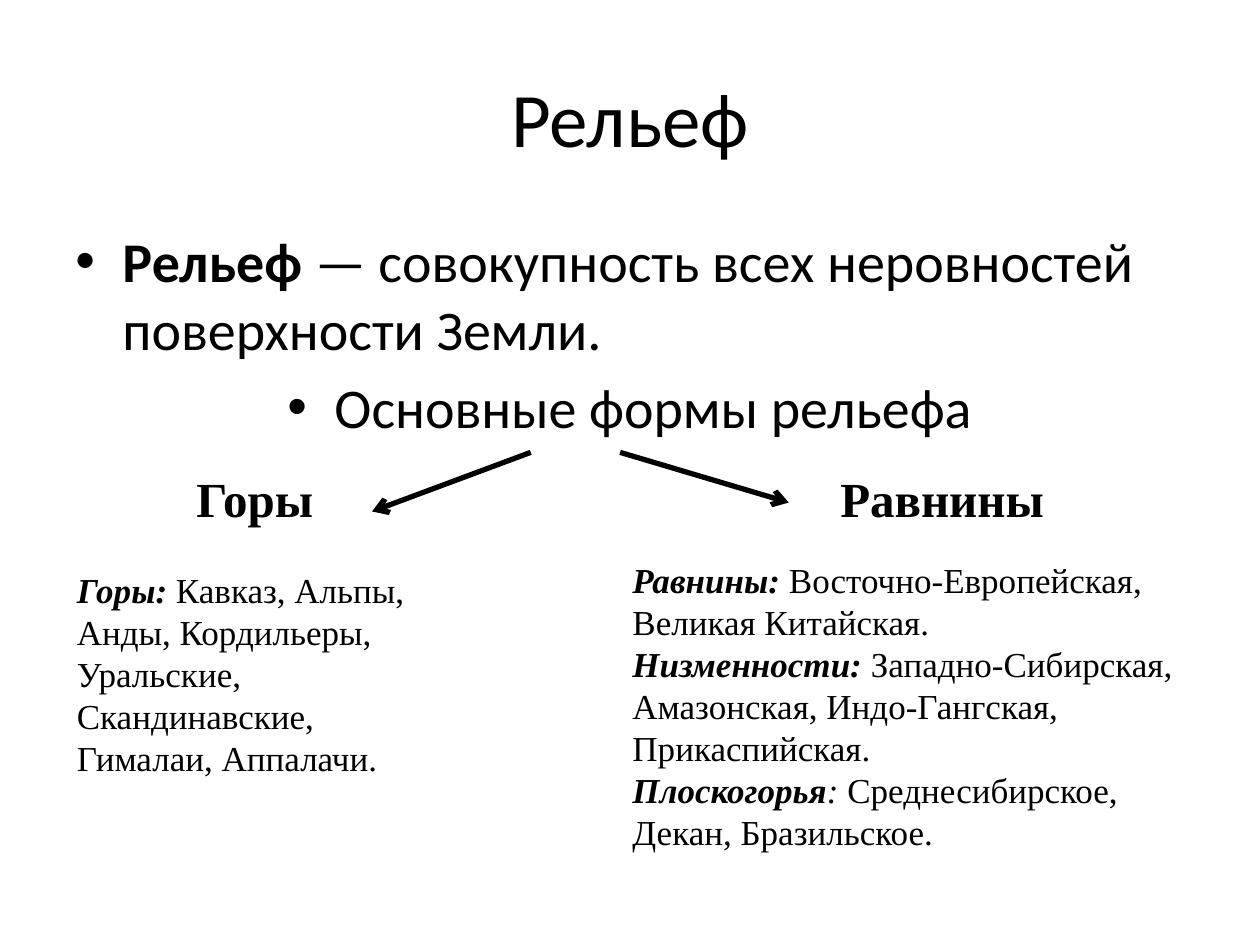
from pptx import Presentation
from pptx.dml.color import RGBColor
from pptx.enum.shapes import MSO_CONNECTOR
from pptx.enum.text import MSO_ANCHOR, PP_ALIGN
from pptx.oxml.ns import qn
from pptx.util import Cm, Pt
from lxml import etree

LINE = MSO_CONNECTOR.STRAIGHT
MIDDLE = MSO_ANCHOR.MIDDLE
LEFT, CENTER = PP_ALIGN.LEFT, PP_ALIGN.CENTER
COLORS = {"ink": "000000", "page": "FFFFFF"}
SANS, SERIF = "Calibri", "Times New Roman"
TITLE_ONLY = 5


def color(name):
    return RGBColor.from_string(COLORS[name])


def style(para, face, size, align=LEFT):
    para.alignment = align
    para.font.name = face
    para.font.size = Pt(size)
    para.font.color.rgb = color("ink")


def add_bullet(para):
    props = para._p.get_or_add_pPr()
    props.set("marL", str(Cm(0.95)))
    props.set("indent", str(-Cm(0.95)))
    font = etree.SubElement(props, qn("a:buFont"))
    font.set("typeface", "Arial")
    mark = etree.SubElement(props, qn("a:buChar"))
    mark.set("char", "•")


def add_runs(para, runs):
    """Add (text, bold, italic) runs."""
    for text, bold, italic in runs:
        run = para.add_run()
        run.text = text
        run.font.bold = bold
        run.font.italic = italic


def add_title(slide, text):
    title = slide.shapes.title
    title.left, title.top = Cm(1.27), Cm(0.76)
    title.width, title.height = Cm(22.86), Cm(3.18)
    frame = title.text_frame
    frame.text = text
    frame.vertical_anchor = MIDDLE
    style(frame.paragraphs[0], SANS, 44, CENTER)


def add_text(slide, box, paras, face, size, aligns=None, bullets=False):
    shape = slide.shapes.add_textbox(*map(Cm, box))
    frame = shape.text_frame
    frame.word_wrap = True
    for i, runs in enumerate(paras):
        para = frame.add_paragraph() if i else frame.paragraphs[0]
        if bullets:
            if i:
                para.space_before = Pt(6.4)
            add_bullet(para)
        style(para, face, size, aligns[i] if aligns else LEFT)
        add_runs(para, runs)


def add_arrow(slide, start, end):
    arrow = slide.shapes.add_connector(LINE, *map(Cm, start + end))
    arrow.line.color.rgb = color("ink")
    arrow.line.width = Pt(3)
    tail = etree.SubElement(arrow.line._get_or_add_ln(), qn("a:tailEnd"))
    tail.set("type", "arrow")
    etree.SubElement(arrow._element.spPr, qn("a:effectLst"))


def main():
    deck = Presentation()
    deck.slide_width, deck.slide_height = Cm(25.4), Cm(19.05)
    slide = deck.slides.add_slide(deck.slide_layouts[TITLE_ONLY])
    slide.background.fill.solid()
    slide.background.fill.fore_color.rgb = color("page")

    add_title(slide, "Рельеф")
    intro = [
        [("Рельеф", True, False),
         (" — совокупность всех неровностей поверхности Земли.", False, False)],
        [("Основные формы рельефа", False, False)],
    ]
    add_text(slide, (1.27, 4.45, 22.86, 12.57), intro, SANS, 32,
             (LEFT, CENTER), bullets=True)

    add_arrow(slide, (12.5, 9.12), (15.9, 10.13))
    add_arrow(slide, (10.7, 9.12), (7.5, 10.31))

    for text, left, width in (("Горы", 3.71, 3.05), ("Равнины", 16.69, 4.8)):
        add_text(slide, (left, 9.32, width, 1.45), [[(text, True, False)]],
                 SERIF, 28)

    plains = [
        [("Равнины:", True, True),
         (" Восточно-Европейская, Великая Китайская.", False, False)],
        [("Низменности: ", True, True),
         ("Западно-Сибирская, Амазонская, Индо-Гангская, Прикаспийская.",
          False, False)],
        [("Плоскогорья", True, True), (":", False, True),
         (" Среднесибирское, Декан, Бразильское.", False, False)],
    ]
    add_text(slide, (12.5, 11.13, 12.19, 7.01), plains, SERIF, 20)
    peaks = [
        [("Горы:", True, True),
         (" Кавказ, Альпы, Анды, Кордильеры, Уральские, Скандинавские, "
          "Гималаи, Аппалачи.", False, False)],
    ]
    add_text(slide, (1.3, 11.33, 8, 4.52), peaks, SERIF, 20)

    deck.save("out.pptx")


if __name__ == "__main__":
    main()
